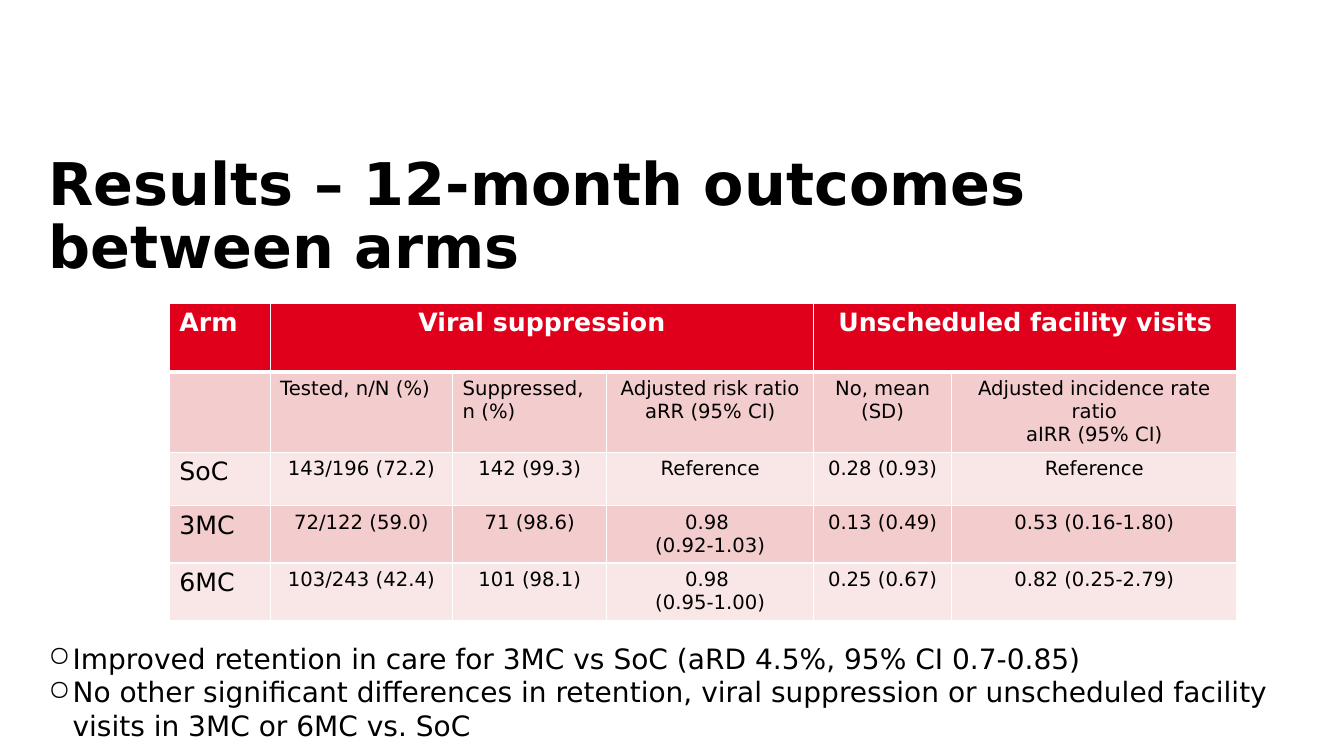
from copy import deepcopy

from lxml import etree
from pptx import Presentation
from pptx.dml.color import RGBColor
from pptx.enum.text import MSO_ANCHOR, PP_ALIGN
from pptx.oxml.ns import qn
from pptx.util import Inches, Pt

WIDE, HIGH = 13.33, 7.5
LEFT, MID = PP_ALIGN.LEFT, PP_ALIGN.CENTER
TOP = MSO_ANCHOR.TOP
BLACK = RGBColor(0x00, 0x00, 0x00)
WHITE = RGBColor(0xFF, 0xFF, 0xFF)
RED = RGBColor(0xE0, 0x00, 0x1B)
ROSE = RGBColor(0xF3, 0xCC, 0xCD)
BLUSH = RGBColor(0xF9, 0xE7, 0xE8)

TITLE = "Results – 12-month outcomes between arms"
NOTES = [
    "Improved retention in care for 3MC vs SoC (aRD 4.5%, 95% CI 0.7-0.85)",
    "No other significant differences in retention, viral suppression or "
    "unscheduled facility visits in 3MC or 6MC vs. SoC",
]
ROWS = [
    ["Arm", "Viral suppression", "", "", "Unscheduled facility visits", ""],
    ["", "Tested, n/N (%)", "Suppressed, n (%)",
     "Adjusted risk ratio\vaRR (95% CI)", "No, mean (SD)",
     "Adjusted incidence rate ratio\vaIRR (95% CI)"],
    ["SoC", "143/196 (72.2)", "142 (99.3)", "Reference",
     "0.28 (0.93)", "Reference"],
    ["3MC", "72/122 (59.0)", "71 (98.6)", "0.98 \v(0.92-1.03)",
     "0.13 (0.49)", "0.53 (0.16-1.80)"],
    ["6MC", "103/243 (42.4)", "101 (98.1)", "0.98 \v(0.95-1.00)",
     "0.25 (0.67)", "0.82 (0.25-2.79)"],
]
SPANS = [(1, 3), (4, 5)]
COLS = [1, 1.81, 1.53, 2.05, 1.37, 2.83]
TALL = [0.68, 0.78, 0.53, 0.55, 0.55]


def write(para, text, size=14, color=BLACK, bold=False, align=LEFT,
          face="DejaVu Sans"):
    para.text = text
    para.alignment = align
    for run in para.runs:
        run.font.name = face
        run.font.size = Pt(size)
        run.font.bold = bold
        run.font.color.rgb = color
    for mark in para._p.findall(qn("a:br")):
        mark.append(deepcopy(para.runs[0]._r.rPr))


def bullet(para, sign, inset):
    props = para._p.get_or_add_pPr()
    props.set("marL", str(Inches(inset)))
    props.set("indent", str(-Inches(inset)))
    etree.SubElement(props, qn("a:buChar"), char=sign)


def edge(cell, **widths):
    """Draw white cell borders; keys are L, R, T and B, values are points."""
    props = cell._tc.get_or_add_tcPr()
    for spot, side in enumerate("LRTB"):
        line = etree.Element(qn("a:ln" + side), w=str(Pt(widths.get(side, 1))))
        fill = etree.SubElement(line, qn("a:solidFill"))
        etree.SubElement(fill, qn("a:srgbClr"), val=str(WHITE))
        props.insert(spot, line)


class Deck:
    def __init__(self):
        self.file = Presentation()
        self.file.slide_width = Inches(WIDE)
        self.file.slide_height = Inches(HIGH)
        self.slide = self.file.slides.add_slide(self.file.slide_layouts[6])

    def place(self, x, y, w, h):
        """Turn shares of the slide's size into lengths."""
        return [Inches(part * full)
                for part, full in zip((x, y, w, h), (WIDE, HIGH) * 2)]

    def text(self, area, lines, sign=None, space=1.0, **style):
        frame = self.slide.shapes.add_textbox(*self.place(*area)).text_frame
        frame.word_wrap = True
        frame.vertical_anchor = TOP
        frame.margin_left = frame.margin_right = 0
        frame.margin_top = frame.margin_bottom = 0
        for i, line in enumerate(lines):
            para = frame.add_paragraph() if i else frame.paragraphs[0]
            write(para, line, **style)
            para.line_spacing = space
            if sign:
                bullet(para, sign, 0.24)

    def table(self, area, rows):
        grid = self.slide.shapes.add_table(
            len(rows), len(COLS), *self.place(*area)).table
        for col, wide in zip(grid.columns, COLS):
            col.width = Inches(wide)
        for row, tall in zip(grid.rows, TALL):
            row.height = Inches(tall)
        for r, row in enumerate(rows):
            for c, text in enumerate(row):
                self.cell(grid.cell(r, c), r, c, text)
        for first, last in SPANS:
            grid.cell(0, first).merge(grid.cell(0, last))

    def cell(self, cell, r, c, text):
        head = r == 0
        cell.fill.solid()
        cell.fill.fore_color.rgb = RED if head else (BLUSH, ROSE)[r % 2]
        edge(cell, T=3 if r == 1 else 1, B=3 if head else 1)
        if text:
            left = c == 0 or (r == 1 and c < 3)
            write(cell.text_frame.paragraphs[0], text,
                  size=18 if head or c == 0 else 14,
                  color=WHITE if head else BLACK, bold=head,
                  align=LEFT if left else MID)


def main():
    deck = Deck()
    deck.text((0.036, 0.204, 0.806, 0.184), [TITLE], space=0.9,
              size=42, bold=True)
    deck.text((0.036, 0.848, 0.934, 0.068), NOTES, sign="○", size=20)
    deck.table((0.126, 0.401, 0.795, 0.412), ROWS)
    deck.file.save("out.pptx")


if __name__ == "__main__":
    main()
